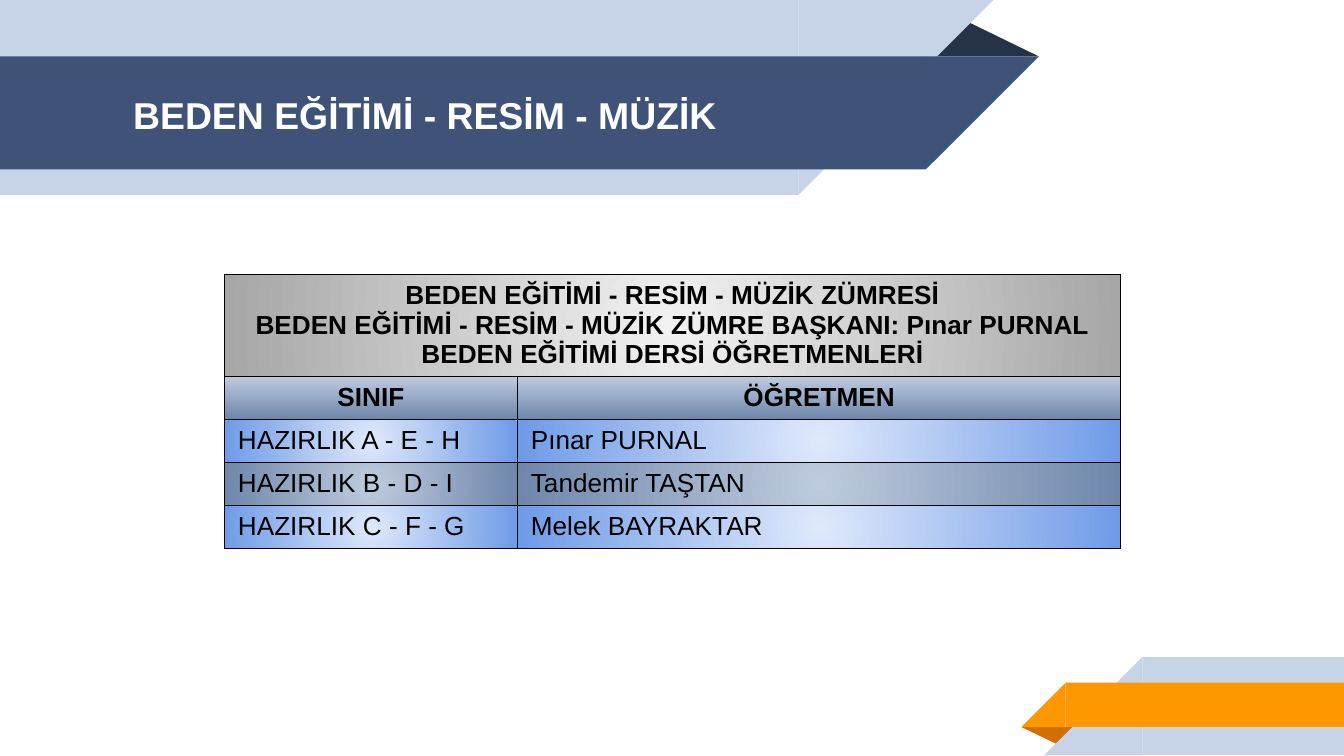
from lxml import etree
from pptx import Presentation
from pptx import util as u
from pptx.dml.color import RGBColor
from pptx.enum import shapes, text
from pptx.oxml import ns

PX = 9144  # EMU per px, 100 px to the inch
FONT = "Arial"
RECT = shapes.MSO_SHAPE.RECTANGLE
CORNER = shapes.MSO_SHAPE.RIGHT_TRIANGLE
FOLD = shapes.MSO_SHAPE.ISOSCELES_TRIANGLE
LIGHT, NAVY, ORANGE = "C7D3E6", "3F5378", "FF9800"
GREY, STEEL, BLUE = ("F2F2F2", "A6A6A6"), ("BECBDE", "6E87AB"), ("DFE9FB", "6E9BE7")

TITLE = "BEDEN EĞİTİMİ - RESİM - MÜZİK"
HEADING = [
    "BEDEN EĞİTİMİ - RESİM - MÜZİK ZÜMRESİ",
    "BEDEN EĞİTİMİ - RESİM - MÜZİK ZÜMRE BAŞKANI: Pınar PURNAL",
    "BEDEN EĞİTİMİ DERSİ ÖĞRETMENLERİ",
]
COLUMNS = ("SINIF", "ÖĞRETMEN")
TEACHERS = [
    ("HAZIRLIK A - E - H", "Pınar PURNAL"),
    ("HAZIRLIK B - D - I", "Tandemir TAŞTAN"),
    ("HAZIRLIK C - F - G", "Melek BAYRAKTAR"),
]


def px(*lengths):
    return [u.Emu(n * PX) for n in lengths]


def color(value):
    return RGBColor.from_string(value)


def set_font(p, value, **fmt):
    for name, setting in {"name": FONT, **fmt}.items():
        setattr(p.font, name, setting)
    p.font.color.rgb = color(value)


def add_block(group, kind, box, fill, rotation=0, flip=False):
    s = group.shapes.add_shape(kind, *px(*box))
    s.shadow.inherit = False
    s.rotation = rotation
    s.fill.solid()
    s.fill.fore_color.rgb = color(fill)
    s.line.fill.background()
    if kind == FOLD:
        s.adjustments[0] = 0.324
    if flip:
        s._element.spPr.find(ns.qn("a:xfrm")).set("flipH", "1")


def add_band(group, x, y, w, h, fill, slant, right):
    """A bar whose slanted end points right (top edge longer) or left."""
    add_block(group, RECT, (x, y, w, h), fill)
    corner_x = x + w if right else x - slant
    add_block(group, CORNER, (corner_x, y, slant, h), fill, 180 if right else 0, True)


def add_title(slide):
    title = slide.shapes.title
    title.left, title.top, title.width, title.height = px(89, 43, 575, 84)
    tf = title.text_frame
    inset = px(10)[0]
    frame = {"vertical_anchor": text.MSO_ANCHOR.MIDDLE, "word_wrap": True,
             "auto_size": text.MSO_AUTO_SIZE.NONE, "margin_left": inset,
             "margin_right": inset, "margin_top": inset, "margin_bottom": inset}
    for name, setting in frame.items():
        setattr(tf, name, setting)
    tf.text = TITLE
    p = tf.paragraphs[0]
    p.alignment = text.PP_ALIGN.LEFT
    set_font(p, "FFFFFF", size=u.Pt(20), bold=True)
    slide.shapes._spTree.append(title._element)  # bring in front of the bands


def style_cell(cell, stops, radial):
    """Black borders first, then the gradient, as the schema orders them."""
    tc_pr = cell._tc.get_or_add_tcPr()
    for side in ("lnL", "lnR", "lnT", "lnB"):
        line = etree.SubElement(tc_pr, ns.qn(f"a:{side}"), w=str(u.Pt(0.75)))
        fill = etree.SubElement(line, ns.qn("a:solidFill"))
        etree.SubElement(fill, ns.qn("a:srgbClr"), val="000000")
    grad = etree.SubElement(tc_pr, ns.qn("a:gradFill"), rotWithShape="1")
    stop_list = etree.SubElement(grad, ns.qn("a:gsLst"))
    for pos, value in zip(("0", "100000"), stops):
        stop = etree.SubElement(stop_list, ns.qn("a:gs"), pos=pos)
        etree.SubElement(stop, ns.qn("a:srgbClr"), val=value)
    if radial:
        shade = etree.SubElement(grad, ns.qn("a:path"), path="circle")
        etree.SubElement(shade, ns.qn("a:fillToRect"), dict.fromkeys("ltrb", "50000"))
    else:
        etree.SubElement(grad, ns.qn("a:lin"), ang="5400000", scaled="0")


def write_cell(cell, lines, header):
    cell.text = "\n".join(lines)
    for p in cell.text_frame.paragraphs:
        p.alignment = text.PP_ALIGN.CENTER if header else text.PP_ALIGN.LEFT
        set_font(p, "000000", size=u.Pt(14), bold=header)


def add_teacher_table(slide):
    widths, heights = (218, 139, 143, 167), (76, 32, 32, 32, 32)
    box = px(167, 204, sum(widths), sum(heights))
    table = slide.shapes.add_table(len(heights), len(widths), *box).table
    table.first_row = table.horz_banding = False
    for column, width in zip(table.columns, px(*widths)):
        column.width = width
    for row, height in zip(table.rows, px(*heights)):
        row.height = height

    # Each row: texts, gradient stops, radial shading, header look
    rows = [([HEADING], GREY, True, True),
            ([[name] for name in COLUMNS], STEEL, False, True)]
    for i, names in enumerate(TEACHERS):
        rows.append(([[name] for name in names], (BLUE, STEEL)[i % 2], True, False))

    for r, (texts, stops, radial, header) in enumerate(rows):
        for c in range(len(widths)):
            style_cell(table.cell(r, c), stops, radial)
        # The last text of a row runs to the right edge
        last = len(texts) - 1
        table.cell(r, last).merge(table.cell(r, len(widths) - 1))
        for c, lines in enumerate(texts):
            cell = table.cell(r, c)
            write_cell(cell, lines, header)
            if r:
                cell.vertical_anchor = text.MSO_ANCHOR.MIDDLE


def main():
    prs = Presentation()
    prs.slide_width = u.Inches(10)
    prs.slide_height = u.Emu(prs.slide_width * 9 // 16)
    slide = prs.slides.add_slide(prs.slide_layouts[5])

    # Title ribbon
    ribbon = slide.shapes.add_group_shape()
    add_block(ribbon, FOLD, (688, 14, 85, 28), "263248")
    add_band(ribbon, 0, 0, 594, 145, LIGHT, 145, True)
    add_band(ribbon, 0, 42, 689, 84, NAVY, 84, True)

    # Corner ribbon
    corner = slide.shapes.add_group_shape()
    add_block(corner, FOLD, (760, 541, 43, 14), "D26F00", 180)
    add_band(corner, 850, 489, 150, 73, LIGHT, 73, False)
    add_band(corner, 793, 508, 207, 33, ORANGE, 33, False)

    add_title(slide)
    add_teacher_table(slide)
    prs.save("out.pptx")


if __name__ == "__main__":
    main()
